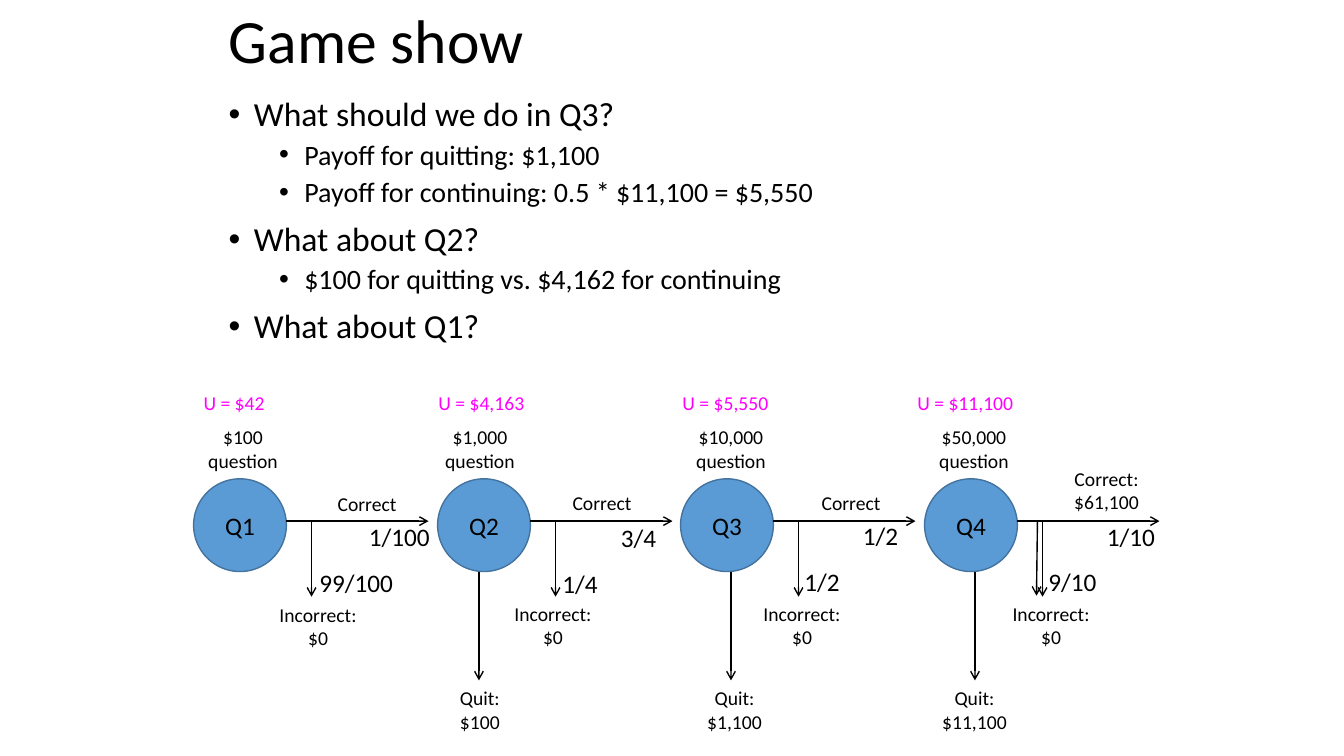
from lxml.etree import SubElement
from pptx import Presentation
from pptx.dml.color import RGBColor
from pptx.enum.shapes import MSO_CONNECTOR, MSO_SHAPE
from pptx.enum.text import MSO_ANCHOR, PP_ALIGN
from pptx.oxml.ns import qn
from pptx.util import Pt

# Content
TITLE = "Game show"
POINTS = [
    (0, "What should we do in Q3?"),
    (1, "Payoff for quitting: $1,100"),
    (1, "Payoff for continuing: 0.5 * $11,100 = $5,550"),
    (0, "What about Q2?"),
    (1, "$100 for quitting vs. $4,162 for continuing"),
    (0, "What about Q1?"),
]
# One stage per question; each label is (kind, text, left, top, width)
STAGES = [
    ("Q1", [
        ("value", "U = $42", 192, 383, 81),
        ("prize", "$100 question", 182, 417, 118),
        ("note", "Correct", 325, 483, 79),
        ("odds", "1/100", 356, 512, 81),
        ("odds", "99/100", 307, 558, 94),
        ("pair", "Incorrect:\n$0", 267, 593, 97),
    ]),
    ("Q2", [
        ("value", "U = $4,163", 425, 383, 106),
        ("prize", "$1,000 question", 417, 417, 118),
        ("note", "Correct", 558, 482, 79),
        ("odds", "3/4", 606, 513, 56),
        ("odds", "1/4", 548, 559, 56),
        ("pair", "Incorrect:\n$0", 500, 592, 97),
        ("pair", "Quit:\n$100", 446, 676, 60),
    ]),
    ("Q3", [
        ("value", "U = $5,550", 667, 383, 106),
        ("prize", "$10,000 question", 666, 417, 118),
        ("note", "Correct", 805, 482, 79),
        ("odds", "1/2", 846, 511, 56),
        ("odds", "1/2", 788, 557, 56),
        ("pair", "Incorrect:\n$0", 747, 592, 97),
        ("pair", "Quit:\n$1,100", 691, 676, 75),
    ]),
    ("Q4", [
        ("value", "U = $11,100", 900, 383, 116),
        ("prize", "$50,000 question", 907, 417, 118),
        ("pair", "Correct:\n$61,100", 1052, 458, 91),
        ("odds", "1/10", 1088, 512, 68),
        ("odds", "9/10", 1030, 557, 68),
        ("pair", "Incorrect:\n$0", 994, 592, 97),
        ("pair", "Quit:\n$11,100", 924, 676, 85),
    ]),
]
QUITS = [475, 725, 967]
EXTRA = (1029, 516, 1028, 591)

# Theme
THEME = {
    "font": "Calibri",
    "black": RGBColor(0, 0, 0),
    "pink": RGBColor(255, 0, 255),
    "blue": RGBColor(0x5B, 0x9B, 0xD5),
    "edge": RGBColor(0x43, 0x73, 0x9E),
    "title": 44, "points": (24, 20), "node": 18,
}
# Label kinds: size, colour, alignment, wrap, height
KINDS = {
    "value": (14, "pink", PP_ALIGN.LEFT, False, 34),
    "prize": (14, "black", PP_ALIGN.CENTER, True, 57),
    "note": (14, "black", PP_ALIGN.LEFT, False, 34),
    "pair": (14, "black", PP_ALIGN.CENTER, False, 57),
    "odds": (18, "black", PP_ALIGN.LEFT, False, 40),
}
PX = 9144
START, STEP, SIZE, TOP, AXIS = 192, 725 / 3, 92, 475, 517

deck = Presentation()
deck.slide_width, deck.slide_height = 1333 * PX, 750 * PX
slide = deck.slides.add_slide(deck.slide_layouts[6])


def put(item, form):
    for name, value in form.items():
        setattr(item, name, value)


def ink(para, size, tint="black"):
    put(para.font, {"name": THEME["font"], "size": Pt(size)})
    para.font.color.rgb = THEME[tint]


def box(left, top, width, height, wrap=True, anchor=MSO_ANCHOR.TOP):
    area = [n * PX for n in (left, top, width, height)]
    frame = slide.shapes.add_textbox(*area).text_frame
    put(frame, {"word_wrap": wrap, "vertical_anchor": anchor})
    return frame


def label(kind, text, left, top, width):
    size, tint, align, wrap, height = KINDS[kind]
    frame = box(left, top, width, height, wrap)
    frame.text = text
    for para in frame.paragraphs:
        para.alignment = align
        ink(para, size, tint)


def arrow(*ends):
    line = slide.shapes.add_connector(
        MSO_CONNECTOR.STRAIGHT, *[round(n) * PX for n in ends])
    line.line.width = Pt(1)
    line.line.color.rgb = THEME["black"]
    SubElement(line.line._get_or_add_ln(), qn("a:tailEnd"), type="arrow")
    SubElement(line._element.spPr, qn("a:effectLst"))


def node(name, left):
    disc = slide.shapes.add_shape(
        MSO_SHAPE.OVAL, left * PX, TOP * PX, SIZE * PX, SIZE * PX)
    disc.shadow.inherit = False
    disc.fill.solid()
    disc.fill.fore_color.rgb = THEME["blue"]
    disc.line.color.rgb = THEME["edge"]
    disc.line.width = Pt(1)
    frame = disc.text_frame
    put(frame, {"text": name, "vertical_anchor": MSO_ANCHOR.MIDDLE})
    para = frame.paragraphs[0]
    para.alignment = PP_ALIGN.CENTER
    ink(para, THEME["node"])


# Title
head = box(217, 0, 900, 87, anchor=MSO_ANCHOR.MIDDLE)
head.text = TITLE
head.paragraphs[0].line_spacing = 0.9
ink(head.paragraphs[0], THEME["title"])

# Bullet points
body = box(217, 92, 900, 300)
for i, (level, text) in enumerate(POINTS):
    para = body.paragraphs[0] if i == 0 else body.add_paragraph()
    put(para, {"text": text, "level": level, "line_spacing": 0.9,
               "space_before": Pt((10, 5)[level] if i else 0)})
    props = para._p.get_or_add_pPr()
    props.set("marL", str((25 + 50 * level) * PX))
    props.set("indent", str(-25 * PX))
    SubElement(props, qn("a:buFont"), typeface="Arial")
    SubElement(props, qn("a:buChar"), char="•")
    ink(para, THEME["points"][level])

# Decision chain
for i, (name, labels) in enumerate(STAGES):
    left = round(START + i * STEP)
    right = left + SIZE
    node(name, left)
    arrow(right, AXIS, right + 141, AXIS)
    arrow(right + 25, AXIS, right + 25, AXIS + 75)
    for part in labels:
        label(*part)

# Quit branches and the second line at Q4
for x in QUITS:
    arrow(x, TOP + SIZE, x, 675)
arrow(*EXTRA)

deck.save("out.pptx")
